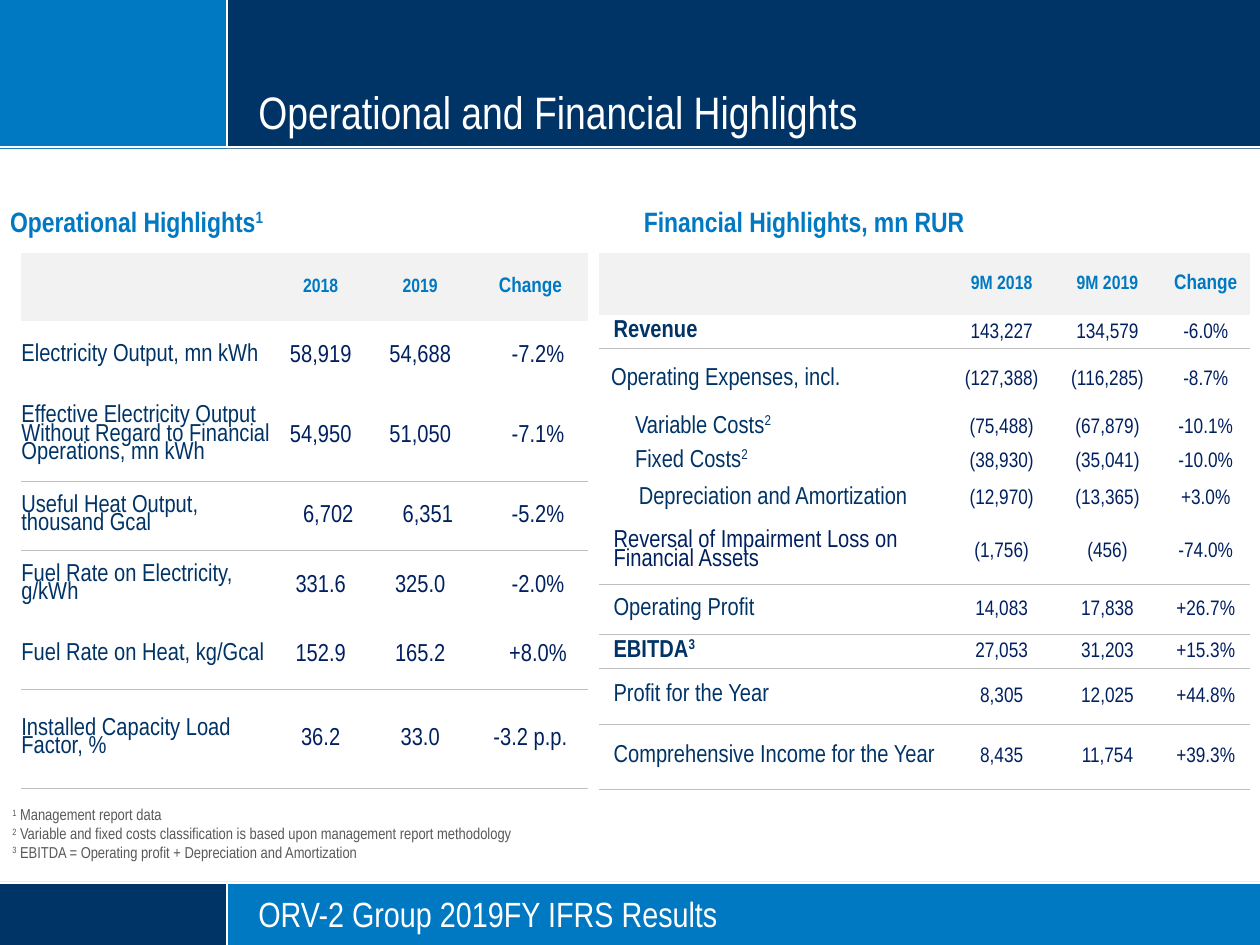
from dataclasses import dataclass

from lxml.etree import SubElement
from pptx import Presentation
from pptx.dml.color import RGBColor
from pptx.enum.shapes import MSO_CONNECTOR, MSO_SHAPE
from pptx.enum.text import MSO_ANCHOR, PP_ALIGN
from pptx.oxml import parse_xml
from pptx.oxml.ns import nsdecls, qn
from pptx.util import Inches, Pt

NAVY, BLUE, INK = "003366", "0079C2", "002060"
WHITE, HEADER_GREY, RULE_GREY, NOTE_GREY = "FFFFFF", "F2F2F2", "BFBFBF", "595959"
PLAIN_TABLE = "{2D5ABB26-0587-4C30-8999-92F81FD0307C}"
COLUMNS, ROWS = 100, 75
BAND, FOOTER, DIVIDER = 11.8, 70, 18


def color(value):
    return RGBColor.from_string(value)


def write(frame, text, size=14, fill=NAVY, bold=False, align=PP_ALIGN.LEFT,
          anchor=MSO_ANCHOR.TOP, spacing=None):
    """Fill a text frame; newlines split paragraphs, ^ raises the next character."""
    frame.vertical_anchor = anchor
    for index, line in enumerate(text.split("\n")):
        para = frame.paragraphs[0] if index == 0 else frame.add_paragraph()
        para.alignment = align
        para.line_spacing = spacing
        first, *marked = line.split("^")
        pieces = [(first, False)]
        for piece in marked:
            pieces += [(piece[0], True), (piece[1:], False)]
        for words, raised in pieces:
            if not words:
                continue
            span = para.add_run()
            span.text = words
            font = span.font
            font.name, font.size, font.bold = Style.font, Pt(size), bold
            font.color.rgb = color(fill)
            if raised:
                span._r.get_or_add_rPr().set("baseline", "30000")


@dataclass
class Row:
    height: float
    label: str
    values: tuple
    rule: bool = False
    indent: float = 0.12
    bold: bool = False
    fill: str = NAVY


class Style:
    font = "Arial Narrow"

    def __init__(self, deck):
        self.unit_x = deck.slide_width / COLUMNS
        self.unit_y = deck.slide_height / ROWS
        self.page = deck.slides.add_slide(deck.slide_layouts[6])

    def place(self, left, top, width, height):
        return (round(left * self.unit_x), round(top * self.unit_y),
                round(width * self.unit_x), round(height * self.unit_y))

    def block(self, area, fill):
        shape = self.page.shapes.add_shape(MSO_SHAPE.RECTANGLE, *self.place(*area))
        shape.shadow.inherit = False
        shape.fill.solid()
        shape.fill.fore_color.rgb = color(fill)
        shape.line.fill.background()

    def line(self, *ends):
        line = self.page.shapes.add_connector(MSO_CONNECTOR.STRAIGHT, *self.place(*ends))
        line.line.color.rgb = color(WHITE)
        line.line.width = Pt(1.25)
        SubElement(line._element.spPr, qn("a:effectLst"))

    def text(self, area, words, wrap=True, insets=(0, 0), **form):
        box = self.page.shapes.add_textbox(*self.place(*area))
        frame = box.text_frame
        frame.word_wrap = wrap
        frame.margin_left = frame.margin_right = Inches(insets[0])
        frame.margin_top = frame.margin_bottom = Inches(insets[1])
        write(frame, words, **form)

    def cell(self, cell, words, margins, rule=False, shade=None, **form):
        (cell.margin_left, cell.margin_top,
         cell.margin_right, cell.margin_bottom) = map(Inches, margins)
        cell.vertical_anchor = MSO_ANCHOR.MIDDLE
        if shade:
            cell.fill.solid()
            cell.fill.fore_color.rgb = color(shade)
        else:
            cell.fill.background()
        if rule:
            cell._tc.get_or_add_tcPr().insert(0, parse_xml(
                f'<a:lnB {nsdecls("a")} w="{Pt(0.75)}"><a:solidFill>'
                f'<a:srgbClr val="{RULE_GREY}"/></a:solidFill></a:lnB>'))
        write(cell.text_frame, words, anchor=MSO_ANCHOR.MIDDLE, **form)

    def table(self, left, top, widths, header_height, headings, rows, size, margins):
        """Draw a header and rows; margins gives the cell margins of a value."""
        heights = [header_height] + [row.height for row in rows]
        frame = self.page.shapes.add_table(
            len(heights), len(widths),
            *self.place(left, top, sum(widths), sum(heights)))
        frame._element.find(".//" + qn("a:tableStyleId")).text = PLAIN_TABLE
        table = frame.table
        for column, width in zip(table.columns, widths):
            column.width = round(width * self.unit_x)
        for line, height in zip(table.rows, heights):
            line.height = round(height * self.unit_y)
        for number, heading in enumerate(("", *headings)):
            self.cell(table.cell(0, number), heading, (0.05, 0.03, 0.05, 0.03),
                      shade=HEADER_GREY, size=12 if heading == "Change" else 11,
                      fill=BLUE, bold=True, align=PP_ALIGN.CENTER)
        for index, row in enumerate(rows, 1):
            self.cell(table.cell(index, 0), row.label, (row.indent, 0, 0, 0),
                      row.rule, bold=row.bold, fill=row.fill, spacing=0.8)
            for number, value in enumerate(row.values, 1):
                self.cell(table.cell(index, number), value, margins(row, number),
                          row.rule, size=size, fill=INK, align=PP_ALIGN.CENTER)


OPERATIONS = [
    Row(5.5, "Electricity Output, mn kWh", ("58,919", "54,688", "-7.2%"), indent=0),
    Row(7.2, "Effective Electricity Output Without Regard to Financial Operations, mn kWh",
        ("54,950", "51,050", "-7.1%"), True, 0),
    Row(5.5, "Useful Heat Output, thousand Gcal", ("6,702", "6,351", "-5.2%"), True, 0),
    Row(5.5, "Fuel Rate on Electricity, g/kWh", ("331.6", "325.0", "-2.0%"), indent=0),
    Row(5.5, "Fuel Rate on Heat, kg/Gcal", ("152.9", "165.2", "+8.0%"), True, 0),
    Row(7.9, "Installed Capacity Load Factor, %", ("36.2", "33.0", "-3.2 p.p."), True, 0),
]
FINANCES = [
    Row(2.7, "Revenue", ("143,227", "134,579", "-6.0%"), True, bold=True),
    Row(4.9, "Operating Expenses, incl.", ("(127,388)", "(116,285)", "-8.7%"), indent=0.1),
    Row(2.7, "Variable Costs^2", ("(75,488)", "(67,879)", "-10.1%"), indent=0.29),
    Row(2.7, "Fixed Costs^2", ("(38,930)", "(35,041)", "-10.0%"), indent=0.29),
    Row(3.2, "Depreciation and Amortization", ("(12,970)", "(13,365)", "+3.0%"), indent=0.32),
    Row(5.2, "Reversal of Impairment Loss on Financial Assets",
        ("(1,756)", "(456)", "-74.0%"), True, fill=INK),
    Row(4, "Operating Profit", ("14,083", "17,838", "+26.7%"), True),
    Row(2.7, "EBITDA^3", ("27,053", "31,203", "+15.3%"), True, bold=True),
    Row(4.4, "Profit for the Year", ("8,305", "12,025", "+44.8%"), True),
    Row(5.2, "Comprehensive Income for the Year", ("8,435", "11,754", "+39.3%"), True),
]
NOTES = """^1 Management report data
^2 Variable and fixed costs classification is based upon management report methodology
^3 EBITDA = Operating profit + Depreciation and Amortization"""


def operation_margins(row, number):
    """Keep values left of centre, save for heat output and percent changes."""
    centred = row.label.startswith("Useful") or row.values[number - 1].endswith("%")
    return 0.13, 0.01, 0.01 if centred else 0.13, 0


def finance_margins(row, number):
    return 0.01, 0.01, 0.01, 0


def main():
    deck = Presentation()
    deck.slide_width, deck.slide_height = Inches(10), Inches(7.5)
    style = Style(deck)

    style.block((0, 0, COLUMNS, BAND), NAVY)
    style.block((0, FOOTER, COLUMNS, ROWS - FOOTER), BLUE)
    style.block((0, FOOTER + 0.1, DIVIDER, ROWS - FOOTER - 0.1), NAVY)
    style.block((0, 0, DIVIDER, BAND), BLUE)
    for height in (BAND - 0.1, FOOTER + 0.1):
        style.line(0, height, COLUMNS, height)
    for start, end in ((FOOTER, ROWS), (0, BAND - 0.1)):
        style.line(DIVIDER, start, DIVIDER, end)

    style.text((20.5, 0, 77.1, 11), "Operational and Financial Highlights",
               size=26, fill=WHITE, anchor=MSO_ANCHOR.BOTTOM)
    style.text((20.5, 70.8, 77.1, 3.4), "ORV-2 Group 2019FY IFRS Results",
               size=20, fill=WHITE, anchor=MSO_ANCHOR.MIDDLE)
    style.text((0.8, 16.2, 20.4, 2.7), "Operational Highlights^1", wrap=False,
               size=16, fill=BLUE, bold=True)
    style.text((51.1, 16.2, 41.4, 2.7), "Financial Highlights, mn RUR",
               size=16, fill=BLUE, bold=True)
    style.table(1.7, 20.1, (20, 7.5, 8.3, 9.2), 5.4, ("2018", "2019", "Change"),
                OPERATIONS, 14, operation_margins)
    style.text((0, 63.3, COLUMNS, 5.6), NOTES, insets=(0.1, 0.05),
               size=9, fill=NOTE_GREY, anchor=MSO_ANCHOR.BOTTOM)
    style.table(47.5, 20.1, (27.9, 8.2, 8.6, 7), 4.9, ("9M 2018", "9M 2019", "Change"),
                FINANCES, 12, finance_margins)
    deck.save("out.pptx")


if __name__ == "__main__":
    main()
